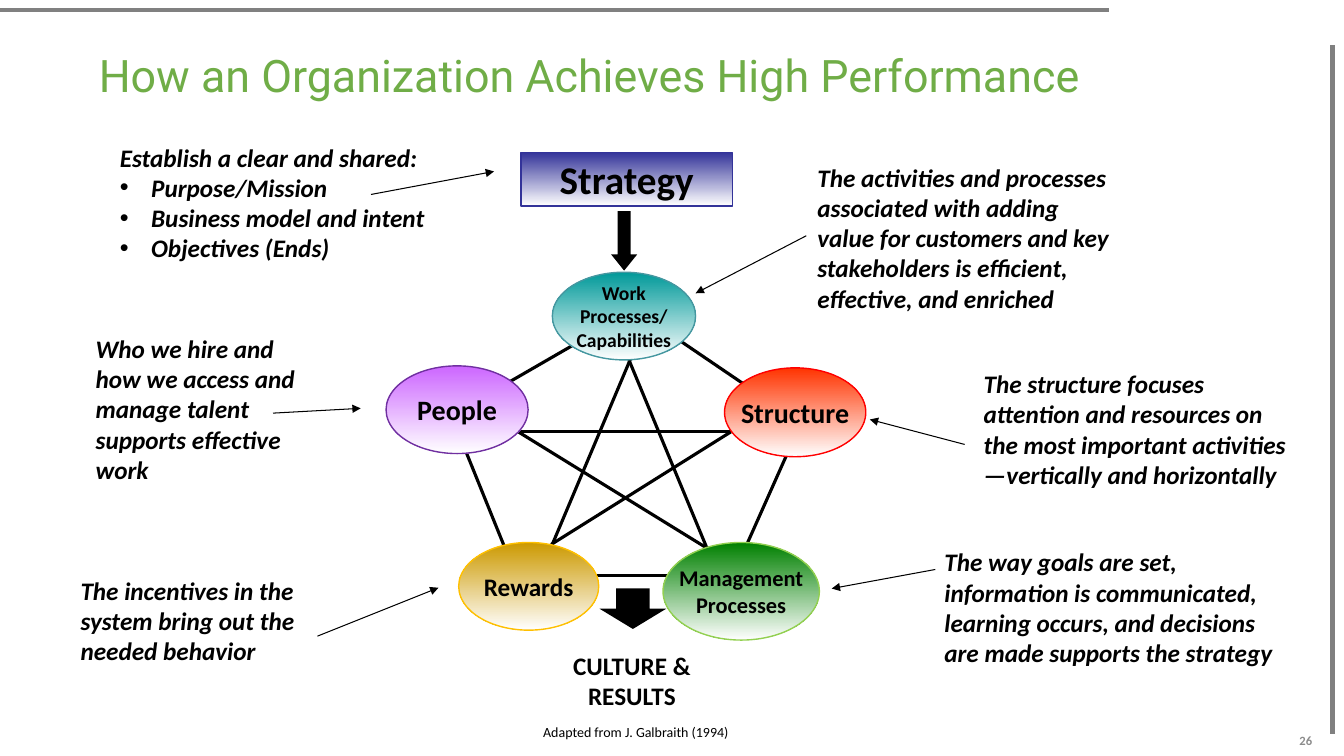
from dataclasses import dataclass

from lxml import etree
from pptx import Presentation
from pptx.dml.color import RGBColor
from pptx.enum.shapes import MSO_CONNECTOR, MSO_SHAPE
from pptx.enum.text import MSO_ANCHOR, PP_ALIGN
from pptx.oxml.ns import qn
from pptx.util import Cm, Pt

STRAIGHT = MSO_CONNECTOR.STRAIGHT
RECTANGLE, OVAL, DOWN_ARROW = MSO_SHAPE.RECTANGLE, MSO_SHAPE.OVAL, MSO_SHAPE.DOWN_ARROW
TOP, MIDDLE = MSO_ANCHOR.TOP, MSO_ANCHOR.MIDDLE
LEFT, CENTER, RIGHT = PP_ALIGN.LEFT, PP_ALIGN.CENTER, PP_ALIGN.RIGHT


@dataclass(frozen=True)
class Theme:
    heading_font: str = "Roboto"
    body_font: str = "Calibri"
    heading: str = "70AD47"
    ink: str = "000000"
    paper: str = "FFFFFF"
    rule: str = "808080"
    page_number: str = "8C8C8C"
    strategy: tuple = ("333399", "333399")
    rewards: tuple = ("CC9900", "FFC000")
    people: tuple = ("CC66FF", "7030A0")
    structure: tuple = ("FF3300", "FF0000")
    management: tuple = ("008000", "92D050")
    work: tuple = ("009999", "4597A0")
    title_size: float = 32
    strategy_size: float = 28
    large_size: float = 20
    body_size: float = 18
    medium_size: float = 16
    small_size: float = 14
    credit_size: float = 10
    page_size: float = 9


class StarSlide:
    def __init__(self, slide, theme):
        self.slide = slide
        self.theme = theme

    def line(self, ends, color, weight, arrow=False):
        connector = self.slide.shapes.add_connector(STRAIGHT, *map(Cm, ends))
        connector.line.color.rgb = RGBColor.from_string(color)
        connector.line.width = Pt(weight)
        properties = connector._element.spPr
        if arrow:
            etree.SubElement(properties.find(qn("a:ln")), qn("a:tailEnd"), type="triangle")
        etree.SubElement(properties, qn("a:effectLst"))

    def fill_frame(self, frame, paragraphs, size, color=None, font=None, bold=False,
                   italic=False, align=LEFT, anchor=TOP, wrap=True, bulleted=False,
                   spacing=None):
        frame.word_wrap = wrap
        frame.vertical_anchor = anchor
        for index, content in enumerate(paragraphs):
            paragraph = frame.paragraphs[0] if index == 0 else frame.add_paragraph()
            paragraph.alignment = align
            if spacing:
                paragraph.line_spacing = spacing
            if bulleted and index:
                self.bullet(paragraph)
            for row, words in enumerate(content.split("\n")):
                if row:
                    paragraph.add_line_break()
                run = paragraph.add_run()
                run.text = words
                run.font.name = font or self.theme.body_font
                run.font.size = Pt(size)
                run.font.bold = bold
                run.font.italic = italic
                run.font.color.rgb = RGBColor.from_string(color or self.theme.ink)

    def bullet(self, paragraph):
        properties = paragraph._p.get_or_add_pPr()
        properties.set("marL", str(Cm(0.79)))
        properties.set("indent", str(-Cm(0.79)))
        etree.SubElement(properties, qn("a:buFont"), typeface="Arial")
        etree.SubElement(properties, qn("a:buChar"), char="•")

    def text(self, box, paragraphs, size, side_inset=0.25, **style):
        frame = self.slide.shapes.add_textbox(*map(Cm, box)).text_frame
        frame.margin_left = frame.margin_right = Cm(side_inset)
        self.fill_frame(frame, paragraphs, size, **style)

    def note(self, box, paragraphs, **style):
        self.text(box, paragraphs, self.theme.body_size, bold=True, italic=True, **style)

    def node(self, kind, box, paragraphs, size, colors):
        shape = self.slide.shapes.add_shape(kind, *map(Cm, box))
        shape.shadow.inherit = False
        top, outline = colors
        shape.fill.gradient()
        shape.fill.gradient_angle = 270
        for stop, color in zip(shape.fill.gradient_stops, (top, self.theme.paper)):
            stop.color.rgb = RGBColor.from_string(color)
        shape.line.color.rgb = RGBColor.from_string(outline)
        shape.line.width = Pt(1)
        self.fill_frame(shape.text_frame, paragraphs, size, bold=True,
                        align=CENTER, anchor=MIDDLE, wrap=False)

    def block_arrow(self, box, head):
        shape = self.slide.shapes.add_shape(DOWN_ARROW, *map(Cm, box))
        shape.shadow.inherit = False
        shape.adjustments[0] = 0.5
        shape.adjustments[1] = head
        shape.fill.solid()
        shape.fill.fore_color.rgb = RGBColor.from_string(self.theme.ink)
        shape.line.fill.background()


def main():
    theme = Theme()
    deck = Presentation()
    deck.slide_width, deck.slide_height = Cm(33.87), Cm(19.05)
    star = StarSlide(deck.slides.add_slide(deck.slide_layouts[6]), theme)

    for rule in ((33.58, 18.49, 33.58, 1.14), (0, 0.25, 27.94, 0.25)):
        star.line(rule, theme.rule, 3.25)
    star.text((2.24, 1.24, 29.21, 2.06), ["How an Organization Achieves High Performance"],
              theme.title_size, color=theme.heading, font=theme.heading_font, spacing=0.9)

    star.note((2.77, 3.45, 8.41, 3.51),
              ["Establish a clear and shared:", "Purpose/Mission",
               "Business model and intent", "Objectives (Ends)"], bulleted=True)
    explanations = (
        ((2.16, 8.18, 6.17, 4.24),
         "Who we hire and how we access and manage talent supports effective work"),
        ((1.78, 14.1, 6.93, 3.07),
         "The incentives in the system bring out the needed behavior"),
        ((24.54, 8.69, 8.26, 4.24),
         "The structure focuses attention and resources on the most important "
         "activities—vertically and horizontally"),
        ((20.35, 4.6, 7.85, 2.77),
         "The activities and processes associated with adding value for customers "
         "and key stakeholders is efficient, effective, and enriched"),
        ((23.55, 13.94, 8.84, 2.72),
         "The way goals are set, information is communicated, learning occurs, "
         "and decisions are made supports the strategy"),
    )
    for box, explanation in explanations:
        star.note(box, [explanation], anchor=MIDDLE)

    pointers = (
        (9.35, 4.9, 12.45, 4.32),
        (6.88, 10.41, 9.09, 10.29),
        (23.57, 14.35, 20.96, 14.83),
        (20.32, 5.94, 17.53, 7.39),
        (24.31, 11.2, 21.92, 10.57),
        (8, 16.03, 11.05, 14.81),
    )
    for pointer in pointers:
        star.line(pointer, theme.ink, 0.75, arrow=True)

    star.block_arrow((15.4, 5.32, 0.66, 1.5), 0.62)
    links = (
        (16.76, 8.33, 19.38, 10.11),
        (19.84, 11.43, 18.82, 13.72),
        (14.94, 8.41, 12.22, 9.98),
        (11.73, 11.35, 12.75, 13.87),
        (13.77, 14.07, 15.9, 9.02),
        (15.85, 9.07, 17.86, 13.92),
        (12.83, 10.74, 17.91, 13.87),
        (12.62, 10.87, 19.15, 10.87),
        (14.1, 14.5, 17.58, 14.5),
        (13.89, 13.72, 18.47, 10.85),
    )
    for link in links:
        star.line(link, theme.ink, 2.25)

    star.node(RECTANGLE, (13.13, 3.84, 5.33, 1.35), ["Strategy"],
              theme.strategy_size, theme.strategy)
    star_points = (
        ((11.56, 13.67, 3.53, 2.21), ["Rewards"], theme.body_size, theme.rewards),
        ((9.73, 9.22, 3.58, 2.21), ["People"], theme.large_size, theme.people),
        ((18.26, 9.27, 3.56, 2.24), ["Structure"], theme.large_size, theme.structure),
        ((16.71, 13.67, 3.94, 2.46), ["Management\nProcesses"],
         theme.medium_size, theme.management),
        ((13.92, 6.86, 3.61, 2.21), ["Work", "Processes/\nCapabilities"],
         theme.small_size, theme.work),
    )
    for point in star_points:
        star.node(OVAL, *point)

    star.block_arrow((15.11, 14.83, 1.68, 1.02), 0.5)
    star.text((14.17, 16.26, 3.51, 1.8), ["CULTURE &", "RESULTS"], theme.body_size,
              bold=True, align=CENTER, wrap=False)
    star.text((13.44, 18.11, 5.26, 0.69), ["Adapted from J. Galbraith (1994)"],
              theme.credit_size, wrap=False)
    star.text((25.45, 18.14, 7.62, 1.02), ["26"], theme.page_size, side_inset=0,
              color=theme.page_number, bold=True, align=RIGHT, anchor=MIDDLE)

    deck.save("out.pptx")


if __name__ == "__main__":
    main()
